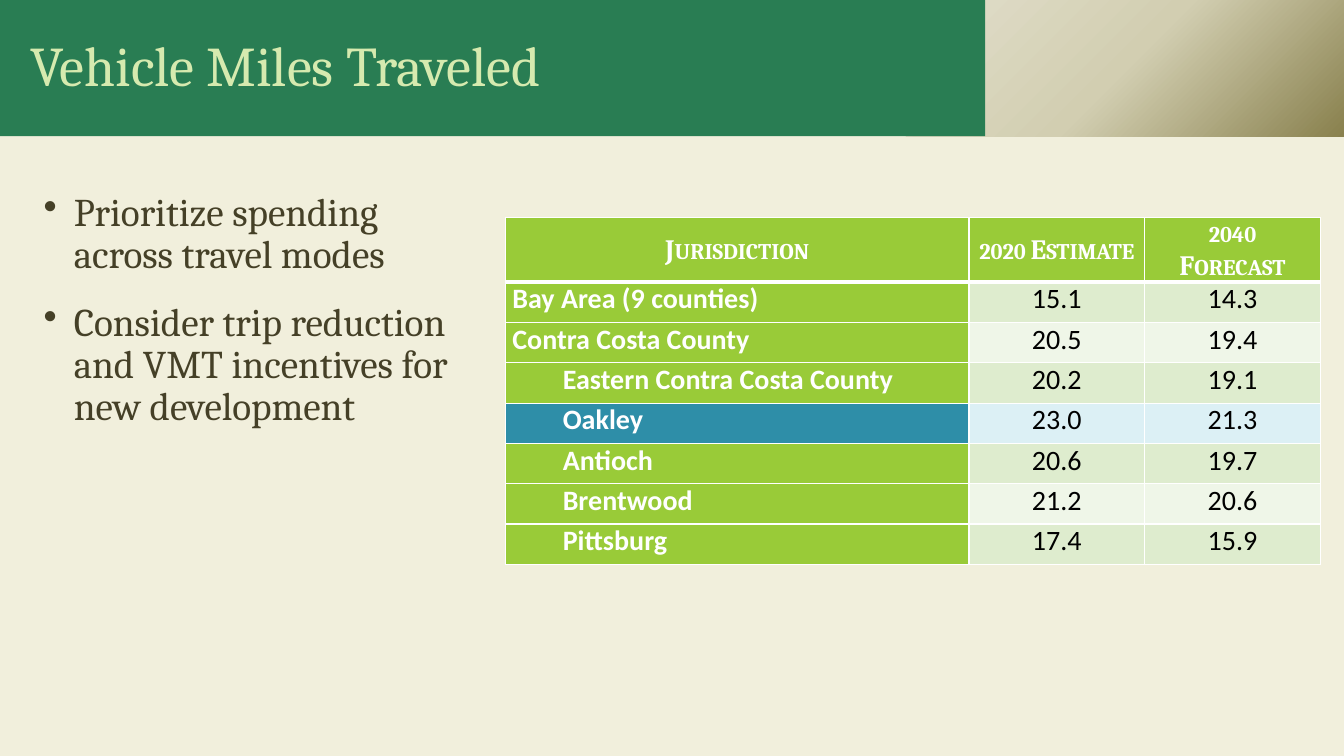
"""Build the Vehicle Miles Traveled slide."""
from dataclasses import dataclass

from lxml.etree import SubElement
from pptx import Presentation
from pptx.dml.color import RGBColor
from pptx.enum.shapes import MSO_SHAPE
from pptx.enum.text import MSO_ANCHOR, MSO_AUTO_SIZE, PP_ALIGN
from pptx.oxml.ns import qn
from pptx.util import Inches, Pt


@dataclass(frozen=True)
class Theme:
    """Colours, fonts and type sizes of the slide."""
    back: str = "F1EFDC"
    banner: str = "297D53"
    title: str = "D6EAAF"
    ink: str = "454027"
    white: str = "FFFFFF"
    black: str = "000000"
    green: str = "99CB38"
    blue: str = "2E8EA8"
    blue_tint: str = "DCF0F5"
    bands: tuple = ("DEECCE", "EFF6E8")
    gradient: tuple = ((0, "89814E"), (50, "D2CEB1"), (100, "E2DFCC"))
    serif: str = "Cambria"
    sans: str = "Calibri"
    title_size: int = 40
    body_size: int = 28
    table_size: int = 20


def assign(obj, values):
    """Set each attribute of obj from a dict."""
    for name, value in values.items():
        setattr(obj, name, value)


def sub(parent, tag, **attrs):
    """Append a DrawingML element."""
    return SubElement(parent, qn(f"a:{tag}"), {k: str(v) for k, v in attrs.items()})


class Deck:
    """Holds the style and current slide; lengths are percent of the slide."""

    def __init__(self, theme):
        """Start a presentation with one title-only slide."""
        self.t = theme
        self.prs = Presentation()
        assign(self.prs, {"slide_width": Inches(13.33), "slide_height": Inches(7.5)})
        self.s = self.prs.slides.add_slide(self.prs.slide_layouts[5])
        self.paint(self.s.background.fill, theme.back)

    def x(self, cols):
        """Convert percent of the width to a length."""
        return round(self.prs.slide_width * cols / 100)

    def y(self, rows):
        """Convert percent of the height to a length."""
        return round(self.prs.slide_height * rows / 100)

    def box(self, left, top, width, height):
        """Return a box as four lengths."""
        return self.x(left), self.y(top), self.x(width), self.y(height)

    def paint(self, fill, color):
        """Give a fill one solid colour."""
        fill.solid()
        fill.fore_color.rgb = RGBColor.from_string(color)

    def put_text(self, p, text, font, color, bold=False, small=False, **layout):
        """Fill a paragraph with formatted text."""
        p.text = text
        assign(p, layout)
        for r in p.runs:
            assign(r.font, {"bold": bold, **font})
            r.font.color.rgb = RGBColor.from_string(color)
            if small:
                r._r.get_or_add_rPr().set("cap", "small")

    def indent(self, p, left, first=0):
        """Set a paragraph's left and first-line indents in inches."""
        pPr = p._p.get_or_add_pPr()
        pPr.set("marL", str(Inches(left)))
        pPr.set("indent", str(Inches(first)))
        return pPr

    def gradient_panel(self, *place):
        """Draw a rectangle shaded from its lower right corner."""
        sp = self.s.shapes.add_shape(MSO_SHAPE.RECTANGLE, *self.box(*place))
        sp.shadow.inherit = False
        sp.line.fill.background()
        spPr = sp._element.spPr
        grad = sub(spPr, "gradFill", rotWithShape=1)
        spPr.find(qn("a:prstGeom")).addnext(grad)
        stops = sub(grad, "gsLst")
        for pos, color in self.t.gradient:
            sub(sub(stops, "gs", pos=pos * 1000), "srgbClr", val=color)
        sub(sub(grad, "path", path="circle"), "fillToRect", l=100000, t=100000, r=0, b=0)

    def title(self, text, *place):
        """Turn the title placeholder into a banner above the panel."""
        sp = self.s.shapes.title
        assign(sp, dict(zip(("left", "top", "width", "height"), self.box(*place))))
        geom = sub(sp._element.spPr, "prstGeom", prst="homePlate")
        sub(sub(geom, "avLst"), "gd", name="adj", fmla="val 0")
        self.paint(sp.fill, self.t.banner)
        tf = sp.text_frame
        assign(tf, {"vertical_anchor": MSO_ANCHOR.MIDDLE, "word_wrap": True,
                    "auto_size": MSO_AUTO_SIZE.NONE})
        p = tf.paragraphs[0]
        self.put_text(p, text, {"name": self.t.serif, "size": Pt(self.t.title_size)},
                      self.t.title, alignment=PP_ALIGN.LEFT, line_spacing=0.9)
        self.indent(p, 0.2)
        self.s.shapes._spTree.append(sp._element)

    def bullets(self, items, *place):
        """Add a bulleted text box."""
        tf = self.s.shapes.add_textbox(*self.box(*place)).text_frame
        tf.word_wrap = True
        for i, text in enumerate(items):
            p = tf.add_paragraph() if i else tf.paragraphs[0]
            sub(self.indent(p, 0.3, -0.3), "buChar", char="•")
            self.put_text(p, text, {"name": self.t.serif, "size": Pt(self.t.body_size)},
                          self.t.ink, line_spacing=0.9, space_before=Pt(18 if i else 0))

    def borders(self, cell, top, bottom):
        """Rule a cell in white with the given top and bottom weights."""
        tcPr = cell._tc.get_or_add_tcPr()
        for side, weight in zip("LRTB", (1, 1, top, bottom)):
            ln = sub(tcPr, f"ln{side}", w=Pt(weight))
            sub(sub(ln, "solidFill"), "srgbClr", val=self.t.white)

    def table(self, rows, left, top, widths, row_height, nested_from, marked):
        """Add a table with a header, nested names and one marked row."""
        t = self.t
        place = self.box(left, top, sum(widths), row_height * len(rows))
        tbl = self.s.shapes.add_table(len(rows), len(widths), *place).table
        tbl.horz_banding = False
        for column, width in zip(tbl.columns, widths):
            column.width = self.x(width)
        for i, row in enumerate(rows):
            tbl.rows[i].height = self.y(row_height)
            head, mark = i == 0, row[0] == marked
            for j, text in enumerate(row):
                cell, label = tbl.cell(i, j), head or j == 0
                assign(cell, {"margin_left": Inches(0.07), "margin_right": Inches(0.07),
                              "margin_top": 0, "margin_bottom": 0,
                              "vertical_anchor": MSO_ANCHOR.MIDDLE if head else MSO_ANCHOR.TOP})
                self.borders(cell, 3 if i == 1 else 1, 3 if head else 1)
                tint = t.blue_tint if mark else t.bands[(i - 1) % 2]
                solid = t.blue if mark else t.green
                self.paint(cell.fill, solid if label else tint)
                p = cell.text_frame.paragraphs[0]
                font = {"name": t.serif if head else t.sans, "size": Pt(t.table_size)}
                self.put_text(p, text, font, t.white if label else t.black, label, head,
                              alignment=PP_ALIGN.CENTER if head or j else PP_ALIGN.LEFT)
                if j == 0 and i >= nested_from:
                    self.indent(p, 0.5)


MILES = (
    ("Jurisdiction", "2020 Estimate", "2040\vForecast"),
    ("Bay Area (9 counties)", "15.1", "14.3"),
    ("Contra Costa County", "20.5", "19.4"),
    ("Eastern Contra Costa County", "20.2", "19.1"),
    ("Oakley", "23.0", "21.3"),
    ("Antioch", "20.6", "19.7"),
    ("Brentwood", "21.2", "20.6"),
    ("Pittsburg", "17.4", "15.9"),
)
ACTIONS = (
    "Prioritize spending across travel modes",
    "Consider trip reduction and VMT incentives for new development",
)


def main():
    """Build and save the slide."""
    deck = Deck(Theme())
    deck.gradient_panel(67.4, 0, 32.6, 18)
    deck.table(MILES, 37.6, 28.8, (34.5, 13.07, 13.07), 5.33, 3, "Oakley")
    deck.title("Vehicle Miles Traveled", 0, 0, 73.3, 18)
    deck.bullets(ACTIONS, 2.5, 24.8, 34.4, 65.2)
    deck.prs.save("out.pptx")


if __name__ == "__main__":
    main()
